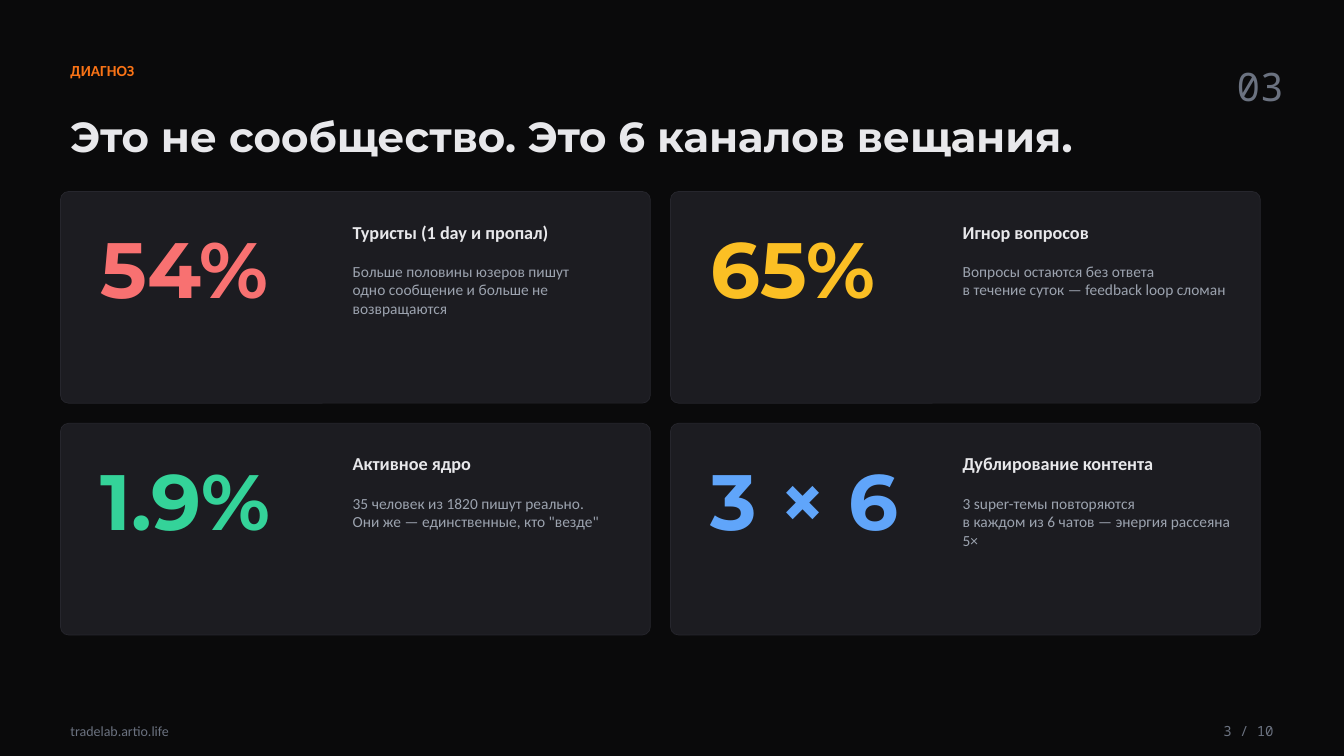
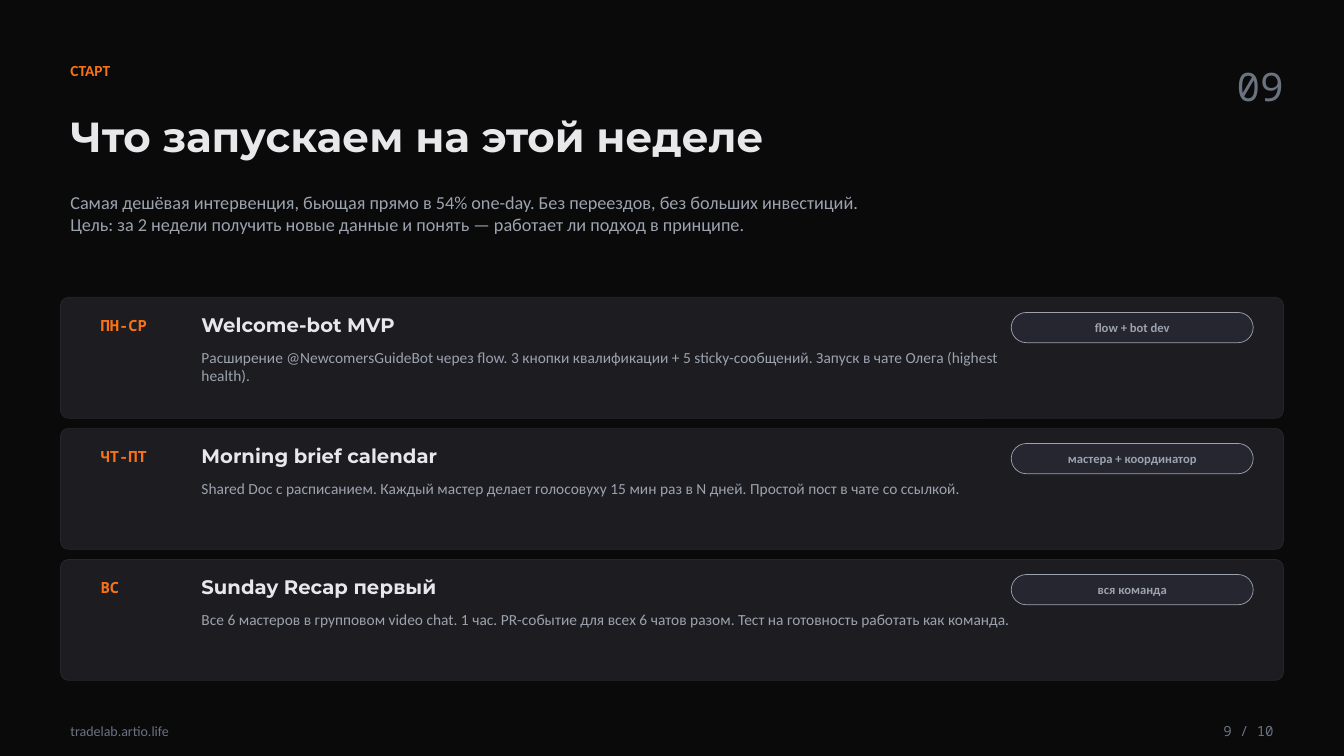
from pptx import Presentation
from pptx.dml.color import RGBColor
from pptx.enum import shapes, text
from pptx.util import Inches, Pt

COLORS = {
    "background": "0A0A0B", "card": "1C1C21", "border": "26262D", "pill": "262631",
    "white": "E8E8EB", "muted": "9CA3AF", "dim": "6B7280", "orange": "F97316",
    "red": "F87171", "yellow": "FBBF24", "green": "34D399", "blue": "60A5FA",
}
BODY, HEADING, MONO = "Calibri", "Montserrat", "Noto Sans Mono"
LEFT, CONTENT_WIDTH = 0.6, 12.13
MIDDLE, TOP = text.MSO_ANCHOR.MIDDLE, text.MSO_ANCHOR.TOP
CENTER, RIGHT = text.PP_ALIGN.CENTER, text.PP_ALIGN.RIGHT


def write(page, area, lines, size, color, font=BODY, bold=False,
          anchor=MIDDLE, align=text.PP_ALIGN.LEFT):
    box = page.shapes.add_textbox(*map(Inches, area))
    frame = box.text_frame
    frame.word_wrap = True
    frame.vertical_anchor = anchor
    frame.text = lines
    for para in frame.paragraphs:
        para.alignment = align
        para.font.name = font
        para.font.size = Pt(size)
        para.font.bold = bold
        para.font.color.rgb = RGBColor.from_string(COLORS[color])


def add_panel(page, area, radius, fill, line):
    panel = page.shapes.add_shape(shapes.MSO_SHAPE.ROUNDED_RECTANGLE, *map(Inches, area))
    panel.adjustments[0] = radius / area[3]
    panel.shadow.inherit = False
    panel.fill.solid()
    panel.fill.fore_color.rgb = RGBColor.from_string(COLORS[fill])
    panel.line.color.rgb = RGBColor.from_string(COLORS[line])
    panel.line.width = Pt(0.5)


deck = Presentation()
deck.slide_width, deck.slide_height = Inches(13.33), Inches(7.5)

pages = []
for number, section, title in [
    (3, "ДИАГНОЗ", "Это не сообщество. Это 6 каналов вещания."),
    (9, "СТАРТ", "Что запускаем на этой неделе"),
]:
    page = deck.slides.add_slide(deck.slide_layouts[6])
    page.background.fill.solid()
    page.background.fill.fore_color.rgb = RGBColor.from_string(COLORS["background"])
    write(page, (LEFT, 0.55, 10, 0.3), section, 11, "orange", bold=True)
    write(page, (12.13, 0.55, 0.7, 0.6), f"{number:02}", 28, "dim", MONO, align=RIGHT)
    write(page, (LEFT, 0.95, CONTENT_WIDTH, 0.8), title, 30, "white", HEADING, True)
    write(page, (LEFT, 7.1, 4, 0.3), "tradelab.artio.life", 10, "dim")
    write(page, (11.73, 7.1, 1, 0.3), f"{number} / 10", 10, "dim", MONO, align=RIGHT)
    pages.append(page)
diagnosis, launch = pages

metrics = [
    ("54%", "red", "Туристы (1 day и пропал)",
     "Больше половины юзеров пишут\nодно сообщение и больше не возвращаются"),
    ("65%", "yellow", "Игнор вопросов",
     "Вопросы остаются без ответа\nв течение суток — feedback loop сломан"),
    ("1.9%", "green", "Активное ядро",
     "35 человек из 1820 пишут реально.\nОни же — единственные, кто \"везде\""),
    ("3 × 6", "blue", "Дублирование контента",
     "3 super-темы повторяются\nв каждом из 6 чатов — энергия рассеяна 5×"),
]
card_width, card_height, gap = 5.85, 2.1, 0.2
for index, (value, color, heading, details) in enumerate(metrics):
    row, column = divmod(index, 2)
    left = LEFT + column * (card_width + gap)
    top = 1.9 + row * (card_height + gap)
    add_panel(diagnosis, (left, top, card_width, card_height), 0.08, "card", "border")
    write(diagnosis, (left + 0.3, top + 0.15, 2.5, 1.2), value, 56, color, HEADING, True)
    write(diagnosis, (left + 2.8, top + 0.2, 2.9, 0.4), heading, 13, "white", bold=True)
    write(diagnosis, (left + 2.8, top + 0.65, 2.9, 1.3), details, 11, "muted", anchor=TOP)

write(launch, (LEFT, 1.85, CONTENT_WIDTH, 0.9),
      "Самая дешёвая интервенция, бьющая прямо в 54% one-day. Без переездов, без больших инвестиций.\n"
      "Цель: за 2 недели получить новые данные и понять — работает ли подход в принципе.",
      13, "muted", anchor=TOP)

steps = [
    ("ПН-СР", "Welcome-bot MVP", "flow + bot dev",
     "Расширение @NewcomersGuideBot через flow. 3 кнопки квалификации + 5 sticky-сообщений. "
     "Запуск в чате Олега (highest health)."),
    ("ЧТ-ПТ", "Morning brief calendar", "мастера + координатор",
     "Shared Doc с расписанием. Каждый мастер делает голосовуху 15 мин раз в N дней. "
     "Простой пост в чате со ссылкой."),
    ("ВС", "Sunday Recap первый", "вся команда",
     "Все 6 мастеров в групповом video chat. 1 час. PR-событие для всех 6 чатов разом. "
     "Тест на готовность работать как команда."),
]
for index, (days, heading, owner, details) in enumerate(steps):
    top = 2.95 + index * 1.3
    pill = (10.03, top + 0.15, 2.4, 0.3)
    add_panel(launch, (LEFT, top, CONTENT_WIDTH, 1.2), 0.08, "card", "border")
    write(launch, (0.9, top + 0.1, 0.9, 0.35), days, 11, "orange", MONO, True)
    write(launch, (1.9, top + 0.1, 5, 0.35), heading, 14, "white", HEADING, True)
    write(launch, (1.9, top + 0.45, 8.5, 0.5), details, 11, "muted", anchor=TOP)
    add_panel(launch, pill, 0.15, "pill", "muted")
    write(launch, pill, owner, 9, "muted", bold=True, align=CENTER)

deck.save("out.pptx")
